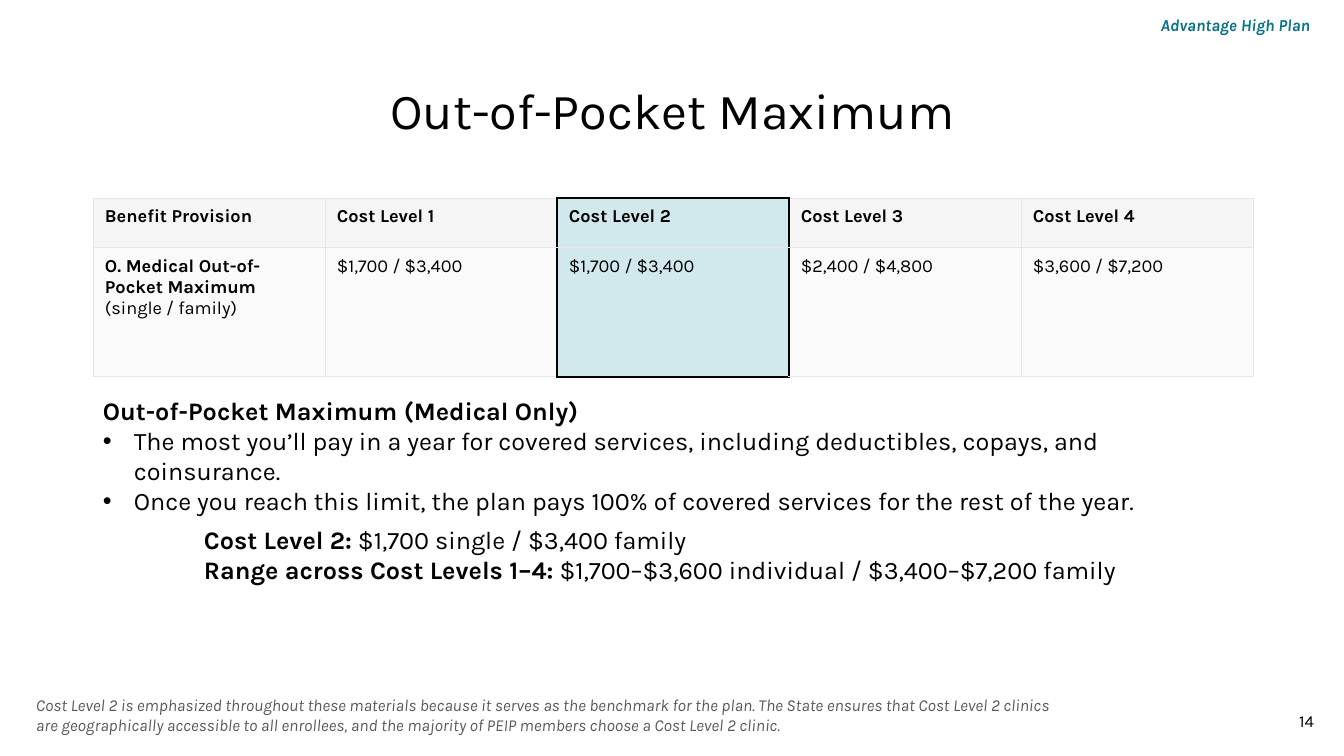
from lxml.etree import SubElement
from pptx import Presentation
from pptx.dml.color import RGBColor
from pptx.enum.text import MSO_ANCHOR as Anchor, MSO_AUTO_SIZE as Fit, PP_ALIGN as Align
from pptx.oxml.ns import qn
from pptx.util import Emu, Pt

FONT = "Karla"
BLACK = RGBColor(0x00, 0x00, 0x00)
TEAL = RGBColor(0x09, 0x72, 0x8A)
GRAY = RGBColor(0x59, 0x59, 0x59)
RULE = RGBColor(0xE6, 0xE6, 0xE6)
HEAD = RGBColor(0xF5, 0xF5, 0xF5)
PALE = RGBColor(0xFA, 0xFA, 0xFA)
FOCUS = RGBColor(0xD1, 0xE8, 0xED)

LEFT, WIDE = 93, 1159
COL = 232
ROWS = (50, 129)
KEY = 2  # highlighted column

# Each cell is a list of lines: (text, bold)
CELLS = [
    [[(name, True)] for name in
     ("Benefit Provision", "Cost Level 1", "Cost Level 2", "Cost Level 3", "Cost Level 4")],
    [[("O. Medical Out-of-Pocket Maximum", True), ("(single / family)", False)]]
    + [[(cost, False)] for cost in
       ("$1,700 / $3,400", "$1,700 / $3,400", "$2,400 / $4,800", "$3,600 / $7,200")],
]
POINTS = (
    "The most you’ll pay in a year for covered services, including deductibles, "
    "copays, and coinsurance.",
    "Once you reach this limit, the plan pays 100% of covered services for the rest of the year.",
)
COSTS = (
    ("Cost Level 2:", "\u00a0$1,700 single / $3,400 family"),
    ("Range across Cost Levels 1–4:", "\u00a0$1,700–$3,600 individual / $3,400–$7,200 family"),
)
NOTE = (
    "Cost Level 2 is emphasized throughout these materials because it serves as the benchmark "
    "for the plan. The State ensures that Cost Level 2 clinics are geographically accessible to "
    "all enrollees, and the majority of PEIP members choose a Cost Level 2 clinic."
)


def px(count):
    return Emu(round(count * 914400 / 100.8))


def add_run(para, text, size, color=BLACK, bold=False, italic=False):
    run = para.add_run()
    run.text = text
    font = run.font
    font.name, font.size = FONT, Pt(size)
    font.bold, font.italic = bold, italic
    font.color.rgb = color


def add_box(slide, left, top, width, height, anchor=Anchor.TOP):
    box = slide.shapes.add_textbox(px(left), px(top), px(width), px(height))
    frame = box.text_frame
    frame.word_wrap = True
    frame.vertical_anchor = anchor
    return frame


def add_label(slide, area, text, align, anchor=Anchor.TOP, **style):
    para = add_box(slide, *area, anchor=anchor).paragraphs[0]
    para.alignment = align
    add_run(para, text, 12, **style)


def indent(para, left, first=0):
    props = para._p.get_or_add_pPr()
    props.set("marL", str(px(left)))
    props.set("indent", str(px(first)))
    return props


def add_bullet(para):
    props = indent(para, 31, -31)
    SubElement(props, qn("a:buFont"), typeface="Arial")
    SubElement(props, qn("a:buChar"), char="•")


def add_edge(cell, side, color, width):
    line = SubElement(cell._tc.get_or_add_tcPr(), qn("a:ln" + side), w=str(Pt(width)))
    fill = SubElement(line, qn("a:solidFill"))
    SubElement(fill, qn("a:srgbClr"), val=str(color))


def style_cell(cell, row, col):
    dark = {
        "L": col in (KEY, KEY + 1),
        "R": col in (KEY - 1, KEY),
        "T": col == KEY and row == 0,
        "B": col == KEY and row == len(ROWS) - 1,
    }
    for side, strong in dark.items():
        add_edge(cell, side, BLACK if strong else RULE, 1 if strong else 0.75)
    cell.fill.solid()
    cell.fill.fore_color.rgb = FOCUS if col == KEY else (HEAD, PALE)[row]
    cell.margin_left, cell.margin_right = px(12), px(8)
    cell.margin_top, cell.margin_bottom = px(8), px(7 - row)


def add_grid(slide):
    count = len(CELLS[0])
    table = slide.shapes.add_table(
        len(ROWS), count, px(LEFT), px(198), px(COL * count), px(sum(ROWS))).table
    table.horz_banding = False
    for col in table.columns:
        col.width = px(COL)
    for r, height in enumerate(ROWS):
        table.rows[r].height = px(height)
        for c, lines in enumerate(CELLS[r]):
            cell = table.cell(r, c)
            style_cell(cell, r, c)
            para = cell.text_frame.paragraphs[0]
            for i, (text, bold) in enumerate(lines):
                if i:
                    para.add_line_break()
                add_run(para, text, 13, bold=bold)


def add_title(slide):
    title = slide.shapes.title
    title.left, title.top, title.width, title.height = px(LEFT), px(40), px(WIDE), px(146)
    frame = title.text_frame
    frame.auto_size = Fit.NONE
    frame.vertical_anchor = Anchor.MIDDLE
    para = frame.paragraphs[0]
    para.alignment = Align.CENTER
    para.line_spacing = 0.9
    add_run(para, "Out-of-Pocket Maximum", 36)


def add_body(slide):
    frame = add_box(slide, LEFT, 390, WIDE, 171)
    add_run(frame.paragraphs[0], "Out-of-Pocket Maximum (Medical Only)", 18, bold=True)
    for text in POINTS:
        para = frame.add_paragraph()
        add_bullet(para)
        add_run(para, text, 18)
    for i, (name, cost) in enumerate(COSTS):
        para = frame.add_paragraph()
        indent(para, 101)
        if i == 0:
            para.space_before = Pt(6)
        add_run(para, name, 18, bold=True)
        add_run(para, cost, 18)


def main():
    deck = Presentation()
    deck.slide_width, deck.slide_height = px(1344), px(756)
    slide = deck.slides.add_slide(deck.slide_layouts[5])

    # Title, cost table and explanation
    add_title(slide)
    add_grid(slide)
    add_body(slide)

    # Plan tag, page number and footnote
    add_label(slide, (1144, 10, 183, 30), "Advantage High Plan", Align.CENTER,
              color=TEAL, bold=True, italic=True)
    add_label(slide, (1022, 701, 302, 40), "14", Align.RIGHT, Anchor.MIDDLE)
    add_label(slide, (26, 690, 1035, 50), NOTE, Align.LEFT, color=GRAY, italic=True)

    deck.save("out.pptx")


if __name__ == "__main__":
    main()
